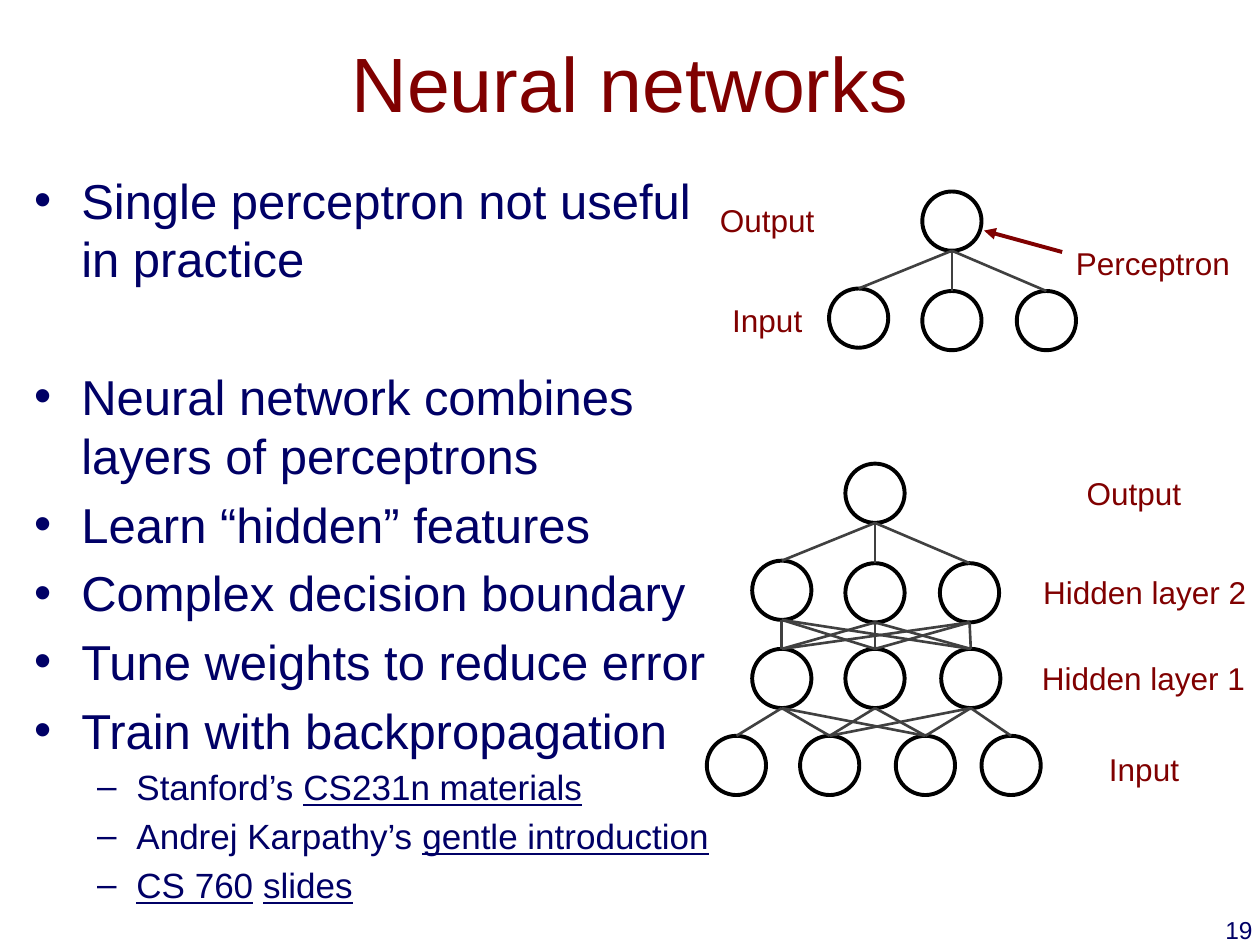
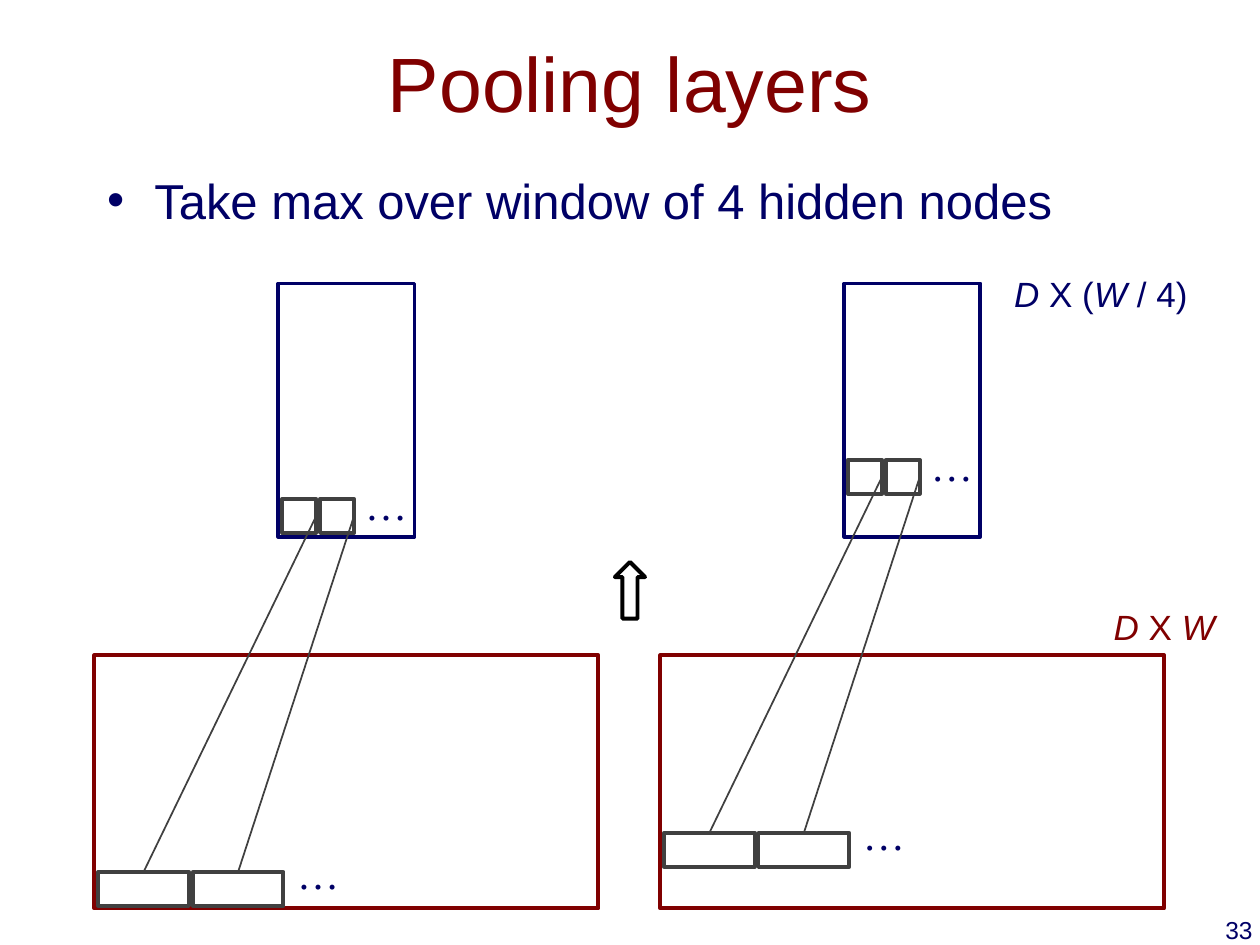
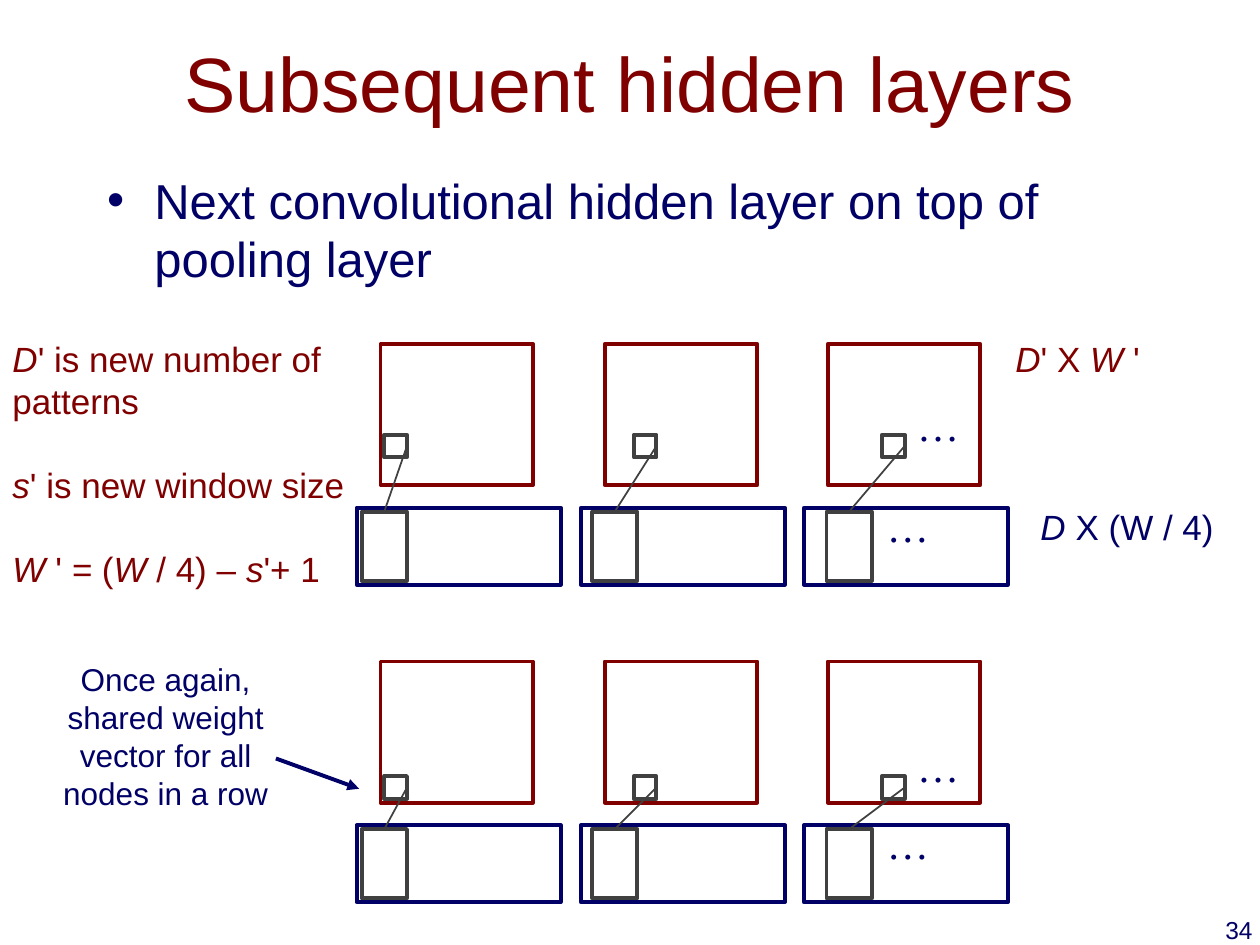
from dataclasses import dataclass

from lxml.etree import SubElement
from pptx import Presentation
from pptx.dml.color import RGBColor
from pptx.enum.shapes import MSO_CONNECTOR, MSO_SHAPE
from pptx.enum.text import MSO_AUTO_SIZE, PP_ALIGN
from pptx.oxml.ns import qn
from pptx.util import Inches, Pt


@dataclass(frozen=True)
class Theme:
    """Colours, fonts and sizes shared by the slides."""

    red: RGBColor = RGBColor(0x80, 0x00, 0x00)
    navy: RGBColor = RGBColor(0x00, 0x00, 0x66)
    gray: RGBColor = RGBColor(0x40, 0x40, 0x40)
    black: RGBColor = RGBColor(0x00, 0x00, 0x00)
    white: RGBColor = RGBColor(0xFF, 0xFF, 0xFF)
    font: str = "Arial"
    dots_font: str = "Times New Roman"
    title: int = 44
    bullet: int = 28
    dots: int = 24
    sub_bullet: int = 20
    note: int = 20
    label: int = 18
    number: int = 14
    outline: float = 2.25
    edge: float = 1.5
    thin: float = 1


THEME = Theme()
NEURON = 0.47


def write(paragraph, text, *, size, color=THEME.navy, font=THEME.font, emphasis="italic"):
    """Write text into a paragraph, giving the parts between asterisks the emphasis."""
    for index, piece in enumerate(text.split("*")):
        if not piece:
            continue
        run = paragraph.add_run()
        run.text = piece
        run.font.name = font
        run.font.size = Pt(size)
        run.font.color.rgb = color
        if index % 2:
            setattr(run.font, emphasis, True)


def place(shape, left, top, width, height):
    """Move and size a shape, in inches."""
    shape.left, shape.top = Inches(left), Inches(top)
    shape.width, shape.height = Inches(width), Inches(height)


def add_label(slide, box, *lines, wrap=True, align=PP_ALIGN.LEFT, gap=0, **text_format):
    """Add a text box with one paragraph for each line."""
    frame = slide.shapes.add_textbox(*map(Inches, box)).text_frame
    frame.word_wrap = wrap
    for index, line in enumerate(lines):
        paragraph = frame.add_paragraph() if index else frame.paragraphs[0]
        paragraph.alignment = align
        if index:
            paragraph.space_before = Pt(gap)
        write(paragraph, line, **text_format)


def add_dots(slide, left, top):
    """Add the ellipsis that continues a row."""
    add_label(slide, (left, top, 0.45, 0.5), "…", size=THEME.dots, font=THEME.dots_font)


def add_outline(slide, box, color, kind=MSO_SHAPE.RECTANGLE, fill=None):
    """Add an outlined preset shape."""
    shape = slide.shapes.add_shape(kind, *map(Inches, box))
    shape.shadow.inherit = False
    if fill is None:
        shape.fill.background()
    else:
        shape.fill.solid()
        shape.fill.fore_color.rgb = fill
    shape.line.color.rgb = color
    shape.line.width = Pt(THEME.outline)
    return shape


def add_line(slide, start, end, color, width):
    """Add a straight connector between two points."""
    connector = slide.shapes.add_connector(MSO_CONNECTOR.STRAIGHT, *start, *end)
    connector.line.color.rgb = color
    connector.line.width = Pt(width)
    SubElement(connector._element.spPr, qn("a:effectLst"))
    return connector


def add_arrow(slide, start, end, color):
    """Add a line with an arrowhead at its end."""
    arrow = add_line(slide, map(Inches, start), map(Inches, end), color, THEME.outline)
    SubElement(arrow.line._get_or_add_ln(), qn("a:tailEnd"), type="triangle")


def bottom_middle(shape):
    """Return the middle of the lower side of a shape."""
    return shape.left + shape.width // 2, shape.top + shape.height


def top_middle(shape):
    """Return the middle of the upper side of a shape."""
    return shape.left + shape.width // 2, shape.top


def link_boxes(slide, upper, lower):
    """Join the bottom of one rectangle to the top of another."""
    connector = add_line(slide, bottom_middle(upper), top_middle(lower), THEME.gray, THEME.thin)
    connector.begin_connect(upper, 3)
    connector.end_connect(lower, 0)


def link_neurons(slide, upper, lowers):
    """Join the bottom of a neuron to the top of each neuron below it."""
    for lower in lowers:
        connector = add_line(slide, bottom_middle(upper), top_middle(lower), THEME.gray, THEME.edge)
        connector.end_connect(lower, 0)


def add_neurons(slide, positions):
    """Add a circle at each position."""
    return [
        add_outline(slide, (left, top, NEURON, NEURON), THEME.black, MSO_SHAPE.OVAL, THEME.white)
        for left, top in positions
    ]


def add_output_tree(slide, left, top):
    """Add an output neuron over three neurons and return the three."""
    output, = add_neurons(slide, [(left, top)])
    layer = add_neurons(
        slide, [(left - 0.74, top + 0.77), (left, top + 0.79), (left + 0.75, top + 0.79)]
    )
    link_neurons(slide, output, layer)
    return layer


def add_deep_network(slide):
    """Add the network with two hidden layers."""
    second_hidden = add_output_tree(slide, 6.71, 3.68)
    first_hidden = add_neurons(slide, [(left, 5.15) for left in (5.97, 6.71, 7.47)])
    inputs = add_neurons(slide, [(left, 5.84) for left in (5.61, 6.35, 7.11, 7.79)])
    for neuron in second_hidden:
        link_neurons(slide, neuron, first_hidden)
    for neuron, reached in zip(first_hidden, (inputs[:3], inputs[1:3], inputs[1:])):
        link_neurons(slide, neuron, reached)


def add_pooling_panel(slide, left, lift):
    """Add a hidden layer, its pooled layer and a row of pooled windows."""
    add_outline(slide, (left, 5.2, 4, 2.01), THEME.red)
    add_outline(slide, (left + 1.46, 2.25, 1.08, 2.01), THEME.navy)
    node_top, window_top = 3.96 - lift, 6.92 - lift
    for node_left, window_left in ((1.49, 0.03), (1.79, 0.78)):
        node = add_outline(slide, (left + node_left, node_top, 0.27, 0.27), THEME.gray)
        window = add_outline(slide, (left + window_left, window_top, 0.72, 0.27), THEME.gray)
        link_boxes(slide, node, window)
    add_dots(slide, left + 2.05, node_top - 0.21)
    add_dots(slide, left + 1.51, window_top - 0.24)


def add_convolution_row(slide, top, node_top):
    """Add three steps of a window sliding along the pooling layer."""
    steps = ((2.83, 2.87, 3.05), (4.61, 4.7, 5.03), (6.38, 6.56, 7))
    for left, window_left, node_left in steps:
        add_outline(slide, (left + 0.19, top, 1.21, 1.12), THEME.red)
        add_outline(slide, (left, top + 1.3, 1.62, 0.61), THEME.navy)
        node = add_outline(slide, (node_left, node_top, 0.18, 0.18), THEME.gray)
        window = add_outline(slide, (window_left, top + 1.33, 0.36, 0.55), THEME.gray)
        link_boxes(slide, node, window)
    add_dots(slide, 7.18, node_top - 0.33)
    add_dots(slide, 6.94, top + 1.19)


def add_slide(presentation, title, number, body_box, bullets):
    """Add a slide with its title, number and list of (level, text) bullets."""
    slide = presentation.slides.add_slide(presentation.slide_layouts[1])
    heading, body = slide.placeholders
    place(heading, 0.75, 0.02, 8.5, 1.25)
    place(body, *body_box)
    for placeholder in (heading, body):
        placeholder.text_frame.auto_size = MSO_AUTO_SIZE.NONE
    write(heading.text_frame.paragraphs[0], title, size=THEME.title, color=THEME.red)
    for index, (level, text) in enumerate(bullets):
        frame = body.text_frame
        paragraph = frame.add_paragraph() if index else frame.paragraphs[0]
        paragraph.level = level
        size = THEME.sub_bullet if level else THEME.bullet
        write(paragraph, text, size=size, emphasis="underline")
    add_label(slide, (7.96, 7.21, 2.08, 0.5), number, align=PP_ALIGN.RIGHT, size=THEME.number)
    return slide


def build_neural_networks(presentation):
    """Build the slide on neural networks."""
    bullets = [
        (0, "Single perceptron not useful in practice"),
        (0, "Neural network combines layers of perceptrons"),
        (0, "Learn “hidden” features"),
        (0, "Complex decision boundary"),
        (0, "Tune weights to reduce error"),
        (0, "Train with backpropagation"),
        (1, "Stanford’s *CS231n materials*"),
        (1, "Andrej Karpathy’s *gentle introduction*"),
        (1, "*CS 760* *slides*"),
    ]
    slide = add_slide(presentation, "Neural networks", "19", (0.17, 1.3, 5.61, 5.62), bullets)
    slide.placeholders[1].text_frame.paragraphs[1].space_before = Pt(45)
    add_output_tree(slide, 7.32, 1.52)
    add_deep_network(slide)
    labels = (
        ("Perceptron", 8.43, 1.89, 1.44),
        ("Output", 5.61, 1.55, 0.96),
        ("Input", 5.71, 2.34, 0.76),
        ("Output", 8.52, 3.71, 0.96),
        ("Hidden layer 2", 8.17, 4.5, 1.83),
        ("Hidden layer 1", 8.16, 5.18, 1.83),
        ("Input", 8.7, 5.9, 0.76),
    )
    for text, left, top, width in labels:
        add_label(
            slide, (left, top, width, 0.4), text, wrap=False,
            align=PP_ALIGN.CENTER, size=THEME.label, color=THEME.red,
        )
    add_arrow(slide, (8.43, 2), (7.81, 1.83), THEME.red)


def build_pooling_layers(presentation):
    """Build the slide on pooling layers."""
    bullets = [(0, "Take max over window of 4 hidden nodes")]
    slide = add_slide(presentation, "Pooling layers", "33", (0.75, 1.3, 8.5, 1.04), bullets)
    add_pooling_panel(slide, 0.75, 0)
    add_pooling_panel(slide, 5.24, 0.31)
    add_outline(slide, (4.88, 4.46, 0.24, 0.45), THEME.black, MSO_SHAPE.UP_ARROW)
    add_label(
        slide, (8.74, 4.76, 1.01, 0.44), "*D* X *W*", wrap=False, size=THEME.note, color=THEME.red
    )
    add_label(slide, (7.95, 2.11, 1.59, 0.44), "*D* X (*W *\u002f 4)".replace("\u002f", "/"),
              wrap=False, size=THEME.note)


def build_subsequent_layers(presentation):
    """Build the slide on subsequent hidden layers."""
    bullets = [(0, "Next convolutional hidden layer on top of pooling layer")]
    slide = add_slide(
        presentation, "Subsequent hidden layers", "34", (0.75, 1.3, 8.5, 4.5), bullets
    )
    add_convolution_row(slide, 2.73, 3.45)
    add_convolution_row(slide, 5.25, 6.16)
    add_label(
        slide, (0, 2.63, 2.85, 2.12),
        "*D*' is new number of patterns",
        "*s*' is new window size",
        "*W *' *= *(*W* / 4) – *s*'+ 1",
        gap=24, size=THEME.note, color=THEME.red,
    )
    add_label(slide, (7.96, 2.63, 1.3, 0.44), "*D*' X *W *'", size=THEME.note, color=THEME.red)
    add_label(slide, (8.16, 3.96, 1.66, 0.44), "*D *X (W / 4)", wrap=False, size=THEME.note)
    add_label(
        slide, (0.3, 5.19, 2.03, 1.31), "Once again, shared weight vector for all nodes in a row",
        align=PP_ALIGN.CENTER, size=THEME.label,
    )
    add_arrow(slide, (2.19, 6.02), (2.85, 6.26), THEME.navy)


def main():
    """Build the presentation and save it."""
    presentation = Presentation()
    presentation.slide_width, presentation.slide_height = Inches(10), Inches(7.5)
    build_neural_networks(presentation)
    build_pooling_layers(presentation)
    build_subsequent_layers(presentation)
    presentation.save("out.pptx")


if __name__ == "__main__":
    main()
